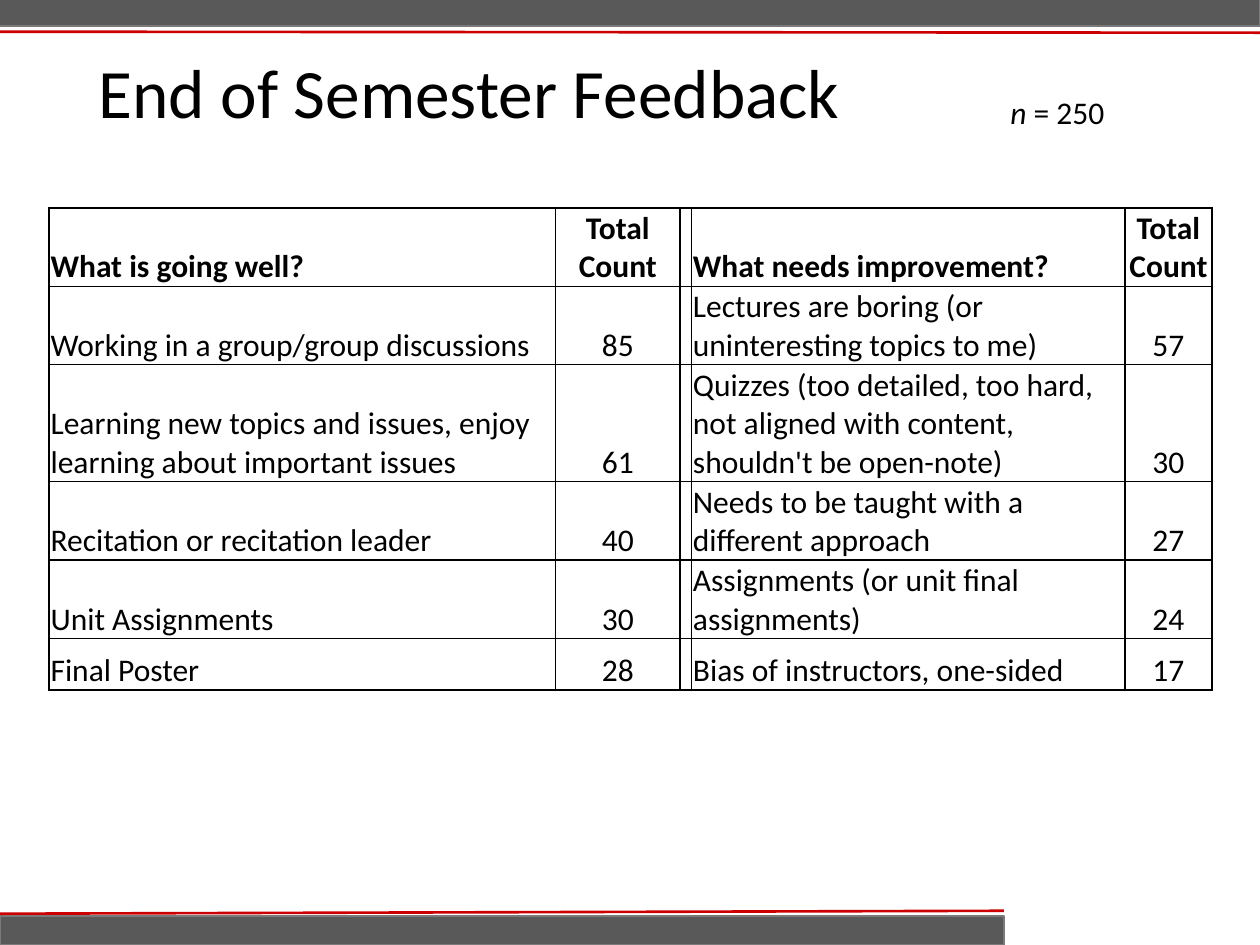
from pptx import Presentation
from pptx.dml.color import RGBColor
from pptx.enum.shapes import MSO_CONNECTOR, MSO_SHAPE
from pptx.enum.text import MSO_ANCHOR, MSO_AUTO_SIZE, PP_ALIGN
from pptx.oxml.ns import qn
from pptx.util import Cm, Pt
from lxml import etree

RECTANGLE = MSO_SHAPE.RECTANGLE
STRAIGHT = MSO_CONNECTOR.STRAIGHT
MIDDLE, BOTTOM = MSO_ANCHOR.MIDDLE, MSO_ANCHOR.BOTTOM
LEFT, CENTER = PP_ALIGN.LEFT, PP_ALIGN.CENTER
FIT_SHAPE, NO_FIT = MSO_AUTO_SIZE.SHAPE_TO_FIT_TEXT, MSO_AUTO_SIZE.NONE

COLORS = {"band": "595959", "band_edge": "7A7A7A", "rule": "CC0000", "text": "000000"}
FONT = "Calibri"
COLUMN_WIDTHS = (10.21, 2.51, 0.23, 8.74, 1.75)
COUNT_COLUMNS = (1, 4)
ROW_HEIGHT = 1.04
FEEDBACK = (
    ("What is going well?", "Total Count", "", "What needs improvement?", "Total Count"),
    ("Working in a group/group discussions", "85", "",
     "Lectures are boring (or uninteresting topics to me)", "57"),
    ("Learning new topics and issues, enjoy learning about important issues", "61", "",
     "Quizzes (too detailed, too hard, not aligned with content, shouldn't be open-note)", "30"),
    ("Recitation or recitation leader", "40", "",
     "Needs to be taught with a different approach", "27"),
    ("Unit Assignments", "30", "", "Assignments (or unit final assignments)", "24"),
    ("Final Poster", "28", "", "Bias of instructors, one-sided", "17"),
)


def color(name):
    """Return the named colour."""
    return RGBColor.from_string(COLORS[name])


def style_font(font, size, bold=False, italic=False):
    """Apply the slide's typeface and text colour to a font."""
    font.name, font.size = FONT, Pt(size)
    font.bold, font.italic = bold, italic
    font.color.rgb = color("text")


def add_band(slide, left, top, width, height, rule_start, rule_end):
    """Draw a grey band with a red rule whose end heights are relative to the band's top."""
    band = slide.shapes.add_shape(RECTANGLE, Cm(left), Cm(top), Cm(width), Cm(height))
    band.shadow.inherit = False
    band.fill.solid()
    band.fill.fore_color.rgb = color("band")
    band.line.color.rgb = color("band_edge")
    band.line.width = Pt(1)
    rule = slide.shapes.add_connector(
        STRAIGHT, Cm(left), Cm(top + rule_start), Cm(left + width), Cm(top + rule_end))
    rule.line.color.rgb = color("rule")
    rule.line.width = Pt(1.5)
    etree.SubElement(rule.element.spPr, qn("a:effectLst"))


def set_title(slide, left, top, width, height):
    """Place and format the slide title."""
    title = slide.shapes.title
    title.left, title.top, title.width, title.height = map(Cm, (left, top, width, height))
    frame = title.text_frame
    frame.text = "End of Semester Feedback"
    frame.vertical_anchor = MIDDLE
    frame.auto_size = NO_FIT
    paragraph = frame.paragraphs[0]
    paragraph.alignment = LEFT
    paragraph.line_spacing = 0.9
    style_font(paragraph.runs[0].font, 39.6)


def add_sample_size(slide, left, top, width, height):
    """Add the sample size beside the title."""
    box = slide.shapes.add_textbox(Cm(left), Cm(top), Cm(width), Cm(height))
    box.text_frame.word_wrap = False
    box.text_frame.auto_size = FIT_SHAPE
    paragraph = box.text_frame.paragraphs[0]
    for text, italic in (("n", True), (" = 250", False)):
        run = paragraph.add_run()
        run.text = text
        style_font(run.font, 18, italic=italic)


def add_borders(cell):
    """Outline a cell on all four sides."""
    properties = cell._tc.get_or_add_tcPr()
    for side in ("lnL", "lnR", "lnT", "lnB"):
        border = etree.SubElement(properties, qn(f"a:{side}"), w=str(Pt(1)))
        fill = etree.SubElement(border, qn("a:solidFill"))
        etree.SubElement(fill, qn("a:srgbClr"), val=COLORS["text"])


def add_feedback_table(slide, left, top):
    """Build the table of comments and counts."""
    table = slide.shapes.add_table(
        len(FEEDBACK), len(COLUMN_WIDTHS), Cm(left), Cm(top),
        Cm(sum(COLUMN_WIDTHS)), Cm(ROW_HEIGHT * len(FEEDBACK))).table
    table.first_row = table.horz_banding = False
    for column, width in zip(table.columns, COLUMN_WIDTHS):
        column.width = Cm(width)
    for row_index, texts in enumerate(FEEDBACK):
        table.rows[row_index].height = Cm(ROW_HEIGHT)
        for column_index, text in enumerate(texts):
            cell = table.cell(row_index, column_index)
            add_borders(cell)
            cell.fill.background()
            cell.vertical_anchor = BOTTOM
            cell.margin_left = cell.margin_right = cell.margin_top = Cm(0.03)
            cell.margin_bottom = 0
            cell.text_frame.text = text
            paragraph = cell.text_frame.paragraphs[0]
            paragraph.alignment = CENTER if column_index in COUNT_COLUMNS else LEFT
            style_font(paragraph.font, 18, bold=row_index == 0)


def main():
    """Build and save the presentation."""
    presentation = Presentation()
    presentation.slide_width, presentation.slide_height = Cm(25.4), Cm(19.05)
    slide = presentation.slides.add_slide(presentation.slide_layouts[5])
    add_band(slide, 0, 18.47, 20.24, 0.58, -0.05, -0.11)
    add_band(slide, -0.03, -0.05, 25.43, 0.58, 0.69, 0.71)
    set_title(slide, 1.73, 1.07, 21.89, 1.73)
    add_feedback_table(slide, 0.99, 4.19)
    add_sample_size(slide, 20.12, 1.75, 2.46, 1.02)
    presentation.save("out.pptx")


if __name__ == "__main__":
    main()
